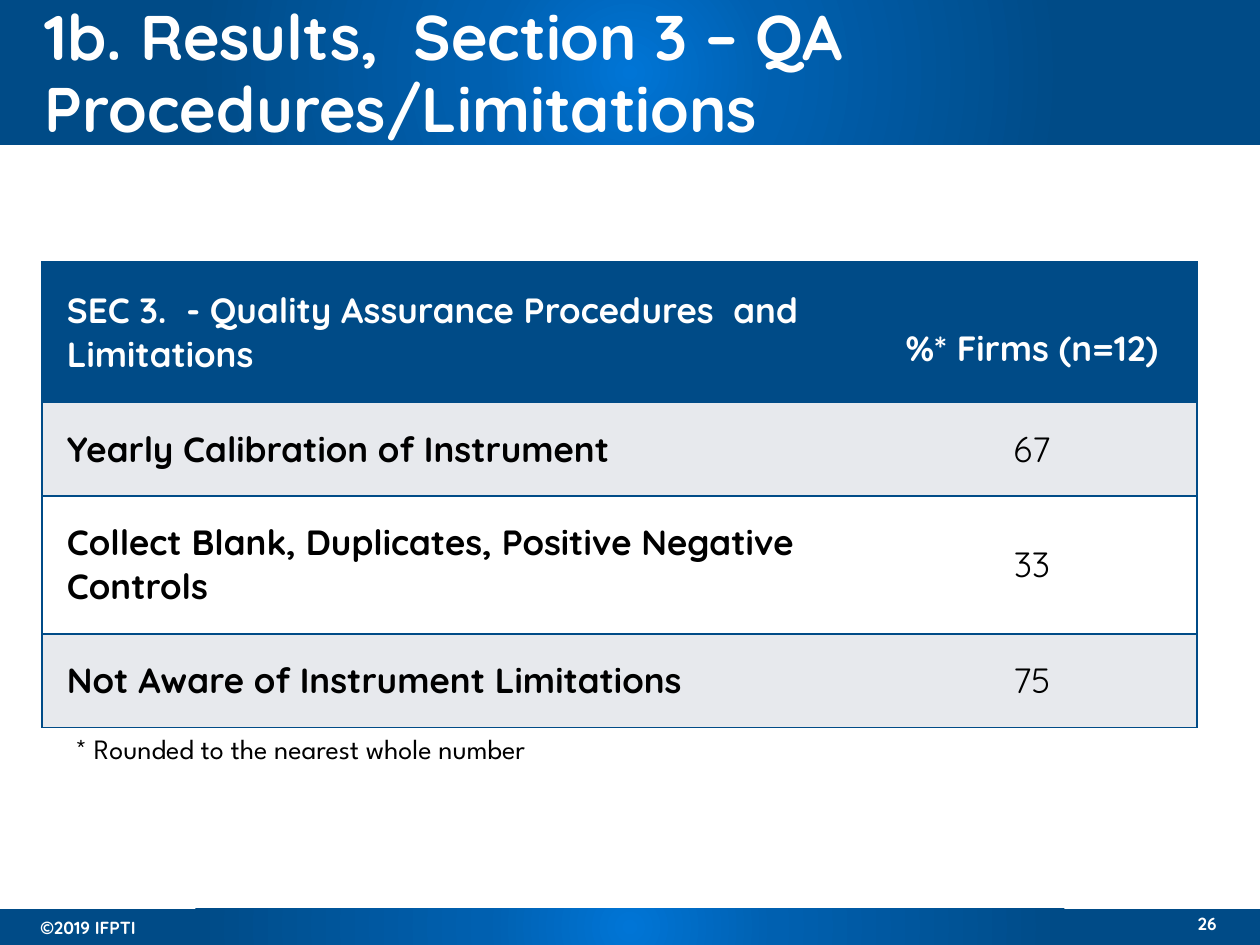
import pptx
import pptx.dml.color
import pptx.enum.shapes
import pptx.enum.text
import pptx.oxml
import pptx.oxml.ns
import pptx.util

PX = 7257  # EMU per px, at 126 px to the inch
NAVY = pptx.dml.color.RGBColor(0x00, 0x4B, 0x87)
WHITE = pptx.dml.color.RGBColor(0xFF, 0xFF, 0xFF)
BLACK = pptx.dml.color.RGBColor(0x00, 0x00, 0x00)
PALE = pptx.dml.color.RGBColor(0xE7, 0xE9, 0xED)
BAND_STOPS = [(0, pptx.dml.color.RGBColor(0x00, 0x75, 0xD6)),
              (23, pptx.dml.color.RGBColor(0x00, 0x60, 0xB0)),
              (69, NAVY), (97, NAVY)]
LEFT, CENTER, RIGHT = (pptx.enum.text.PP_ALIGN.LEFT, pptx.enum.text.PP_ALIGN.CENTER,
                       pptx.enum.text.PP_ALIGN.RIGHT)
MIDDLE = pptx.enum.text.MSO_ANCHOR.MIDDLE
NS = pptx.oxml.ns.nsdecls("a")


def write(frame, text, size, color, bold=True, align=LEFT, face="Quicksand"):
    frame.word_wrap = True
    paragraph = frame.paragraphs[0]
    paragraph.text = text
    paragraph.alignment = align
    paragraph.font.size = pptx.util.Pt(size)
    paragraph.font.name = face
    paragraph.font.bold = bold
    paragraph.font.color.rgb = color


def set_borders(cell, sides):
    """Rule the given sides (of L, R, T, B) in navy and clear the others."""
    properties = cell._tc.get_or_add_tcPr()
    for place, side in enumerate("LRTB"):
        paint = (f'<a:solidFill><a:srgbClr val="{NAVY}"/></a:solidFill>'
                 if side in sides else "<a:noFill/>")
        properties.insert(place, pptx.oxml.parse_xml(
            f'<a:ln{side} {NS} w="12700">{paint}</a:ln{side}>'))


deck = pptx.Presentation()
deck.slide_width = 1260 * PX
deck.slide_height = 945 * PX
slide = deck.slides.add_slide(deck.slide_layouts[5])
shapes = slide.shapes

# Header and footer bands with a radial gradient
stops = "".join(f'<a:gs pos="{position * 1000}"><a:srgbClr val="{color}"/></a:gs>'
                for position, color in BAND_STOPS)
for top, height in [(0, 145), (909, 36)]:
    band = shapes.add_shape(pptx.enum.shapes.MSO_SHAPE.RECTANGLE,
                            0, top * PX, 1260 * PX, height * PX)
    band.shadow.inherit = False
    band.line.fill.background()
    band.fill.gradient()
    gradient = band._element.spPr.find(pptx.oxml.ns.qn("a:gradFill"))
    gradient.getparent().replace(gradient, pptx.oxml.parse_xml(
        f'<a:gradFill {NS} rotWithShape="1"><a:gsLst>{stops}</a:gsLst>'
        '<a:path path="circle"><a:fillToRect l="50000" t="50000" r="50000" b="50000"/>'
        '</a:path></a:gradFill>'))

# Title, brought in front of the header band
title = shapes.title
title.left, title.top, title.width, title.height = 32 * PX, 16 * PX, 1174 * PX, 118 * PX
title.text_frame.auto_size = pptx.enum.text.MSO_AUTO_SIZE.NONE
title.text_frame.vertical_anchor = MIDDLE
write(title.text_frame, "1b. Results,  Section 3 – QA Procedures/Limitations", 36, WHITE)
title.text_frame.paragraphs[0].line_spacing = 0.95
title._element.getparent().append(title._element)

# Results table
results = [
    ("SEC 3.  - Quality Assurance Procedures  and Limitations", "%* Firms (n=12)"),
    ("Yearly Calibration of Instrument", "67"),
    ("Collect Blank, Duplicates, Positive Negative Controls", "33"),
    ("Not Aware of Instrument Limitations", "75"),
]
row_heights = [140, 93, 138, 94]
table = shapes.add_table(len(results), 2, 42 * PX, 262 * PX,
                         1155 * PX, sum(row_heights) * PX).table
table.columns[0].width = 809 * PX
table.columns[1].width = 346 * PX
for row, (entries, height) in enumerate(zip(results, row_heights)):
    table.rows[row].height = height * PX
    is_header = row == 0
    for column, entry in enumerate(entries):
        cell = table.cell(row, column)
        cell.margin_left = cell.margin_top = cell.margin_bottom = 25 * PX
        cell.margin_right = 9 * PX
        cell.vertical_anchor = MIDDLE
        cell.fill.solid()
        cell.fill.fore_color.rgb = NAVY if is_header else PALE if row % 2 else WHITE
        write(cell.text_frame, entry, 20, WHITE if is_header else BLACK,
              bold=is_header or column == 0, align=CENTER if column else LEFT)
        set_borders(cell, "RTB" if column else "LTB")
table.cell(0, 1).margin_top = 57 * PX  # the column heading sits low

# Footnote and footer
for text, left, top, width, height, size, color, bold, align, face in [
    ("* Rounded to the nearest whole number", 63, 725, 945, 47, 16, BLACK, False, LEFT,
     "League Spartan"),
    ("©2019 IFPTI", 28, 911, 168, 34, 10, WHITE, True, LEFT, "Quicksand"),
    ("26", 1108, 907, 121, 34, 10, WHITE, True, RIGHT, "Quicksand"),
]:
    note = shapes.add_textbox(left * PX, top * PX, width * PX, height * PX)
    write(note.text_frame, text, size, color, bold, align, face)

deck.save("out.pptx")
